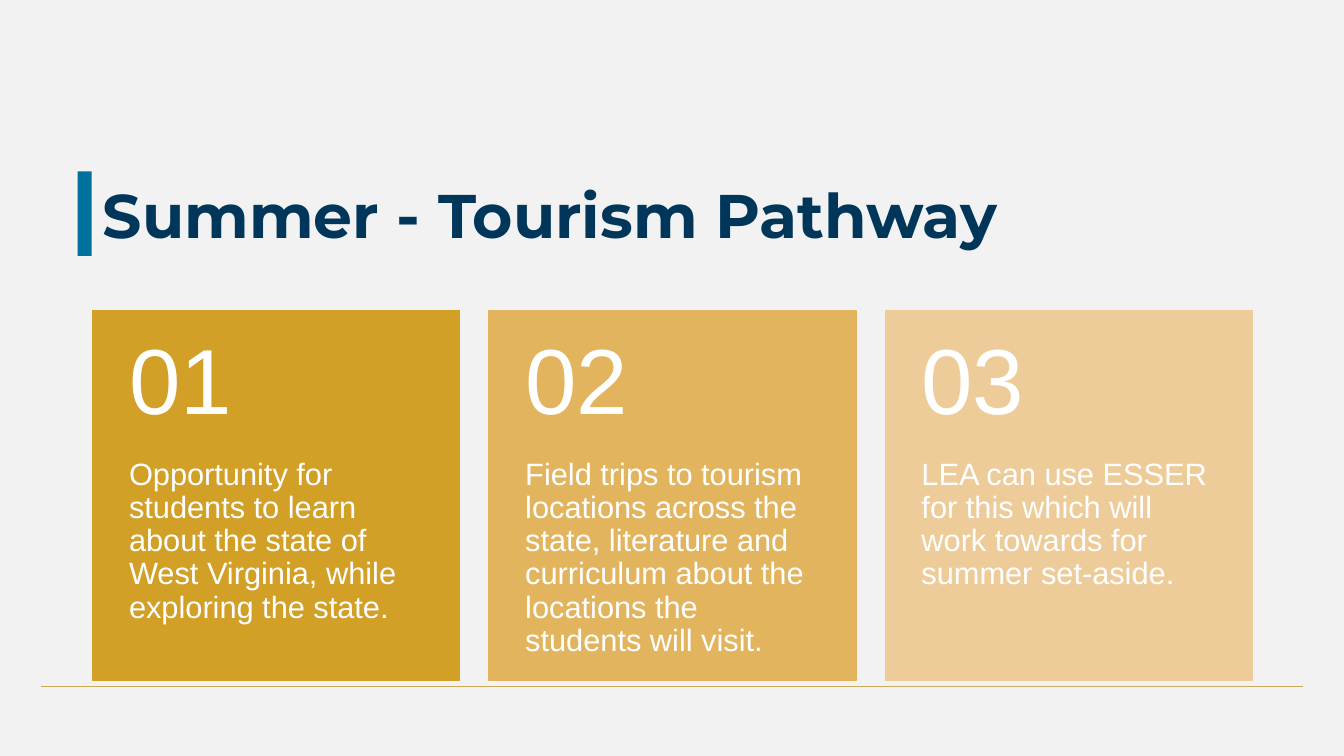
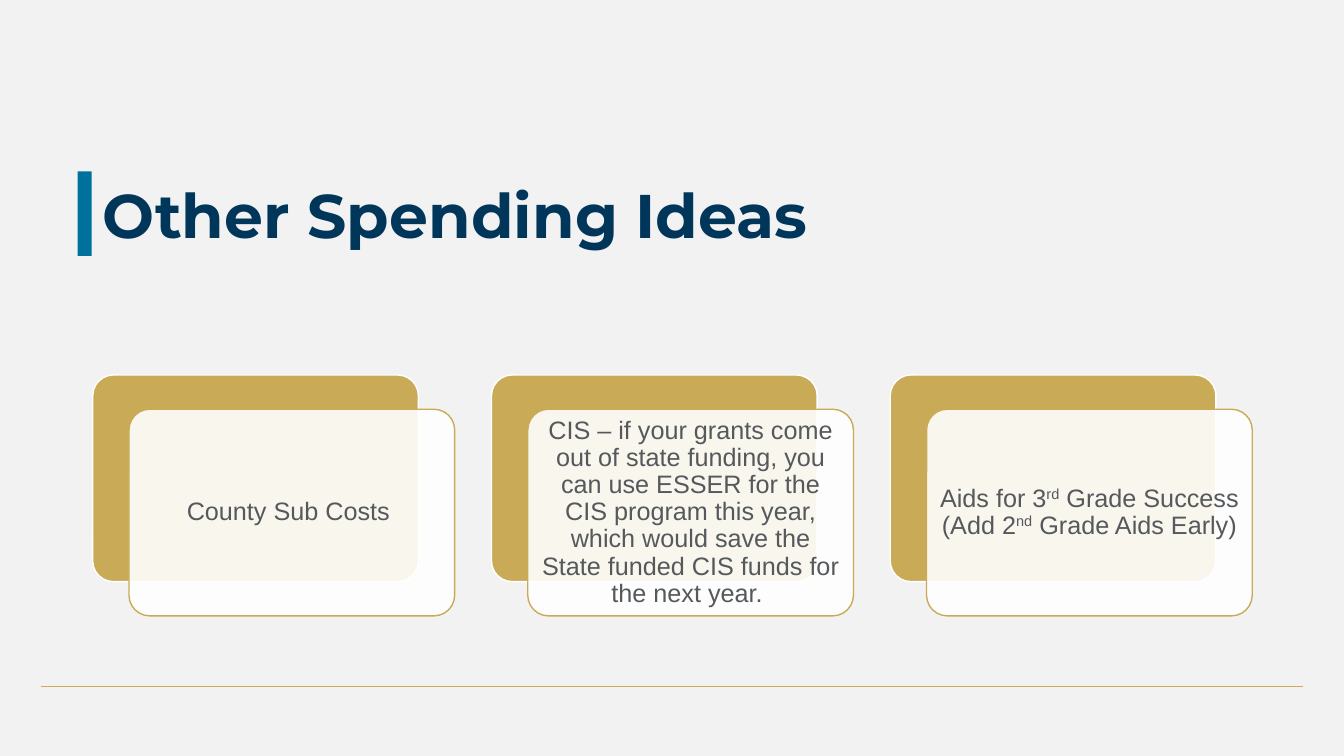
from lxml import etree
from pptx import Presentation
from pptx import util as u
from pptx.dml.color import RGBColor
from pptx.enum import shapes, text
from pptx.oxml.ns import qn

COLORS = {
    "background": "F2F2F2", "rule": "CAAB57", "bar": "00719C", "title": "00365A",
    "gold": "C9AB57", "white": "FFFFFF", "body": "55595C",
}
TITLE_FONT, BODY_FONT = "Montserrat", "Arial"

PATHWAY_TITLE = "Summer - Tourism Pathway"
PATHWAY = [
    ("D29F27", "Opportunity for students to learn about the state of West Virginia, "
               "while exploring the state."),
    ("E3B45E", "Field trips to tourism locations across the state, literature and "
               "curriculum about the locations the students will visit."),
    ("EECC9A", "LEA can use ESSER for this which will work towards for summer set-aside."),
]
IDEAS_TITLE = "Other Spending Ideas"
# Each idea is a list of runs; every second run is raised.
IDEAS = [
    ["County Sub Costs "],
    ["CIS – if your grants come out of state funding, you can use ESSER for the CIS "
     "program this year, which would save the State funded CIS funds for the next year. "],
    ["Aids for 3", "rd", " Grade Success (Add 2", "nd", " Grade Aids Early) "],
]

WIDTH, HEIGHT = 13.33, 7.5
LEFT, CONTENT_WIDTH = 0.92, 11.5
RULE_MARGIN, RULE_TOP = 0.41, 6.81
PANEL_WIDTH, PANEL_TOP, PANEL_HEIGHT = 3.64, 3.08, 3.67
NUMBER_SHARE, PANEL_INSET = 0.4, 0.36
CARD_WIDTH, CARD_HEIGHT, CARD_TOP = 3.23, 2.05, 3.72
CARD_SHIFT_X, CARD_SHIFT_Y = 0.36, 0.34


def color(value):
    return RGBColor.from_string(value)


def inches(*lengths):
    return [u.Inches(length) for length in lengths]


def column_lefts(count, width):
    """Left edges of equal columns spread over the content width."""
    pitch = (CONTENT_WIDTH - width) / (count - 1)
    return [LEFT + index * pitch for index in range(count)]


def add_block(slide, kind, box, fill, line=None):
    shape = slide.shapes.add_shape(kind, *inches(*box))
    shape.shadow.inherit = False
    shape.fill.solid()
    shape.fill.fore_color.rgb = color(fill)
    if line:
        shape.line.color.rgb = color(line)
        shape.line.width = u.Pt(1)
    else:
        shape.line.fill.background()
    return shape


def write(shape, runs, size, fill, insets, anchor, align=text.PP_ALIGN.LEFT,
          font=BODY_FONT, bold=False):
    """Fill a shape with one paragraph; odd-numbered runs become superscript."""
    frame = shape.text_frame
    frame.word_wrap = True
    frame.auto_size = text.MSO_AUTO_SIZE.NONE
    frame.vertical_anchor = anchor
    (frame.margin_left, frame.margin_top,
     frame.margin_right, frame.margin_bottom) = inches(*insets)
    paragraph = frame.paragraphs[0]
    paragraph.alignment = align
    paragraph.line_spacing = 0.9
    for index, words in enumerate(runs):
        run = paragraph.add_run()
        run.text = words
        run.font.name, run.font.size, run.font.bold = font, u.Pt(size), bold
        run.font.color.rgb = color(fill)
        if index % 2:
            run._r.get_or_add_rPr().set("baseline", "30000")


def add_titled_slide(presentation, title):
    slide = presentation.slides.add_slide(presentation.slide_layouts[5])
    placeholder = slide.shapes.title
    (placeholder.left, placeholder.top,
     placeholder.width, placeholder.height) = inches(LEFT, 1.44, CONTENT_WIDTH, 1.45)
    write(placeholder, [title], 44, COLORS["title"], (0.1, 0.05, 0.1, 0.05),
          text.MSO_ANCHOR.MIDDLE, font=TITLE_FONT, bold=True)
    return slide


def decorate_layout(slide):
    """Draw the title bar and bottom rule, then move them to the slide's layout."""
    layout = slide.slide_layout
    layout.background.fill.solid()
    layout.background.fill.fore_color.rgb = color(COLORS["background"])
    rule = slide.shapes.add_connector(
        shapes.MSO_CONNECTOR.STRAIGHT,
        *inches(RULE_MARGIN, RULE_TOP, WIDTH - RULE_MARGIN, RULE_TOP))
    rule.line.color.rgb = color(COLORS["rule"])
    rule.line.width = u.Pt(1)
    etree.SubElement(rule.element.spPr, qn("a:effectLst"))
    bar = add_block(slide, shapes.MSO_SHAPE.RECTANGLE, (0.77, 1.7, 0.14, 0.84), COLORS["bar"])
    for shape in (rule, bar):
        layout.shapes.element.append(shape.element)


def add_panels(slide):
    number_height = PANEL_HEIGHT * NUMBER_SHARE
    lefts = column_lefts(len(PATHWAY), PANEL_WIDTH)
    for number, (left, (fill, words)) in enumerate(zip(lefts, PATHWAY), 1):
        add_block(slide, shapes.MSO_SHAPE.RECTANGLE,
                  (left, PANEL_TOP, PANEL_WIDTH, PANEL_HEIGHT), fill, fill)
        heading = slide.shapes.add_textbox(
            *inches(left, PANEL_TOP, PANEL_WIDTH, number_height))
        write(heading, [f"{number:02}"], 66, COLORS["white"],
              (PANEL_INSET, 0.18, PANEL_INSET, 0.18), text.MSO_ANCHOR.MIDDLE)
        body = slide.shapes.add_textbox(
            *inches(left, PANEL_TOP + number_height, PANEL_WIDTH,
                    PANEL_HEIGHT - number_height))
        write(body, [words], 22, COLORS["white"],
              (PANEL_INSET, 0, PANEL_INSET, PANEL_INSET), text.MSO_ANCHOR.TOP)


def add_cards(slide):
    lefts = column_lefts(len(IDEAS), CARD_WIDTH + CARD_SHIFT_X)
    for left, runs in zip(lefts, IDEAS):
        back, front = [
            add_block(slide, shapes.MSO_SHAPE.ROUNDED_RECTANGLE,
                      (left + step * CARD_SHIFT_X, CARD_TOP + step * CARD_SHIFT_Y,
                       CARD_WIDTH, CARD_HEIGHT), COLORS[fill], COLORS[line])
            for step, (fill, line) in enumerate([("gold", "white"), ("white", "gold")])]
        for card in (back, front):
            card.adjustments[0] = 0.1
        front_fill = front.element.spPr.find(qn("a:solidFill"))
        etree.SubElement(front_fill[0], qn("a:alpha"), val="90000")
        write(front, runs, 18, COLORS["body"], (0.07,) * 4,
              text.MSO_ANCHOR.MIDDLE, text.PP_ALIGN.CENTER)


def main():
    presentation = Presentation()
    presentation.slide_width, presentation.slide_height = inches(WIDTH, HEIGHT)
    pathway = add_titled_slide(presentation, PATHWAY_TITLE)
    decorate_layout(pathway)
    add_panels(pathway)
    add_cards(add_titled_slide(presentation, IDEAS_TITLE))
    presentation.save("out.pptx")


if __name__ == "__main__":
    main()
